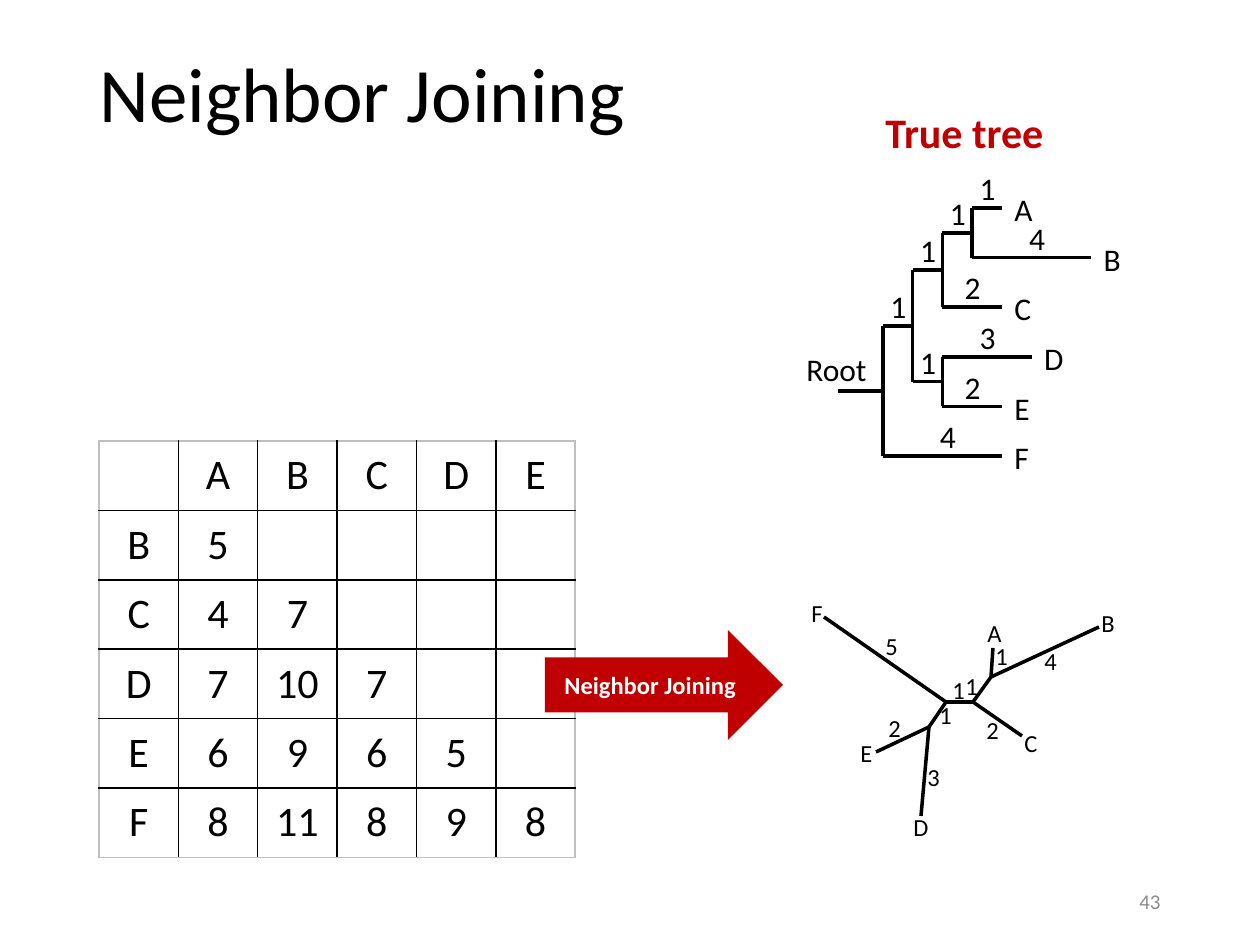
import pptx
import pptx.dml.color
import pptx.enum.shapes
import pptx.enum.text
import pptx.oxml
import pptx.oxml.ns
import pptx.util

RGBColor = pptx.dml.color.RGBColor
ALIGN = pptx.enum.text.PP_ALIGN
ANCHOR = pptx.enum.text.MSO_ANCHOR
BLACK = RGBColor(0x00, 0x00, 0x00)
WHITE = RGBColor(0xFF, 0xFF, 0xFF)
RED = RGBColor(0xC0, 0x00, 0x00)
GRAY = RGBColor(0x8C, 0x8C, 0x8C)
EDGE_GRAY = RGBColor(0xBF, 0xBF, 0xBF)

DISTANCES = [
    ["", "A", "B", "C", "D", "E"],
    ["B", "5", "", "", "", ""],
    ["C", "4", "7", "", "", ""],
    ["D", "7", "10", "7", "", ""],
    ["E", "6", "9", "6", "5", ""],
    ["F", "8", "11", "8", "9", "8"],
]
TABLE_LEFT, TABLE_TOP, COLUMN, ROW = 99, 441, 79, 69

TRUE_TREE = [
    (1, [
        (1, [(1, [(1, "A"), (4, "B")]), (2, "C")]),
        (1, [(3, "D"), (2, "E")]),
    ]),
    (4, "F"),
]
LEAVES = "ABCDEF"
ROOT_X, FIRST_LEAF_Y = 883, 208
UNIT, LEAF_GAP = 29.75, 49.6
LONG_LABEL_SHIFT = {4: 5}

NODES = {
    "left hub": (946, 702), "right hub": (973, 702),
    "AB": (991, 677), "DE": (929, 727),
    "A": (993, 648), "B": (1099, 627), "C": (1022, 736),
    "D": (921, 816), "E": (876, 752), "F": (824, 617),
}
BRANCHES = [
    ("AB", "B", "4", (1032, 640)),
    ("right hub", "C", "2", (974, 709)),
    ("DE", "D", "3", (915, 756)),
    ("DE", "E", "2", (876, 707)),
    ("left hub", "F", "5", (873, 625)),
    ("AB", "A", "1", (983, 635)),
    ("right hub", "AB", "1", (953, 665)),
    ("left hub", "right hub", "1", (940, 669)),
    ("left hub", "DE", "1", (927, 694)),
]
LEAF_LABELS = {
    "A": (975, 612), "B": (1089, 602), "C": (1012, 722),
    "D": (901, 806), "E": (848, 732), "F": (799, 592),
}


def px(value):
    return round(value * 914400 / 126)


def write(frame, text, size, color=BLACK, bold=False, align=ALIGN.LEFT):
    para = frame.paragraphs[0]
    para.alignment = align
    span = para.add_run()
    span.text = text
    values = {"name": "Calibri", "size": pptx.util.Pt(size), "bold": bold}
    for key, value in values.items():
        setattr(span.font, key, value)
    span.font.color.rgb = color
    return para


def add_label(shapes, text, left, top, width, height, size, color=BLACK, bold=False):
    box = shapes.add_textbox(px(left), px(top), px(width), px(height))
    box.text_frame.word_wrap = False
    write(box.text_frame, text, size, color, bold)


def add_line(shapes, start, end):
    line = shapes.add_connector(
        pptx.enum.shapes.MSO_CONNECTOR.STRAIGHT, *map(px, (*start, *end)))
    line.line.color.rgb = BLACK
    line.line.width = pptx.util.Pt(2)
    line._element.spPr.append(pptx.oxml.parse_xml(
        "<a:effectLst %s/>" % pptx.oxml.ns.nsdecls("a")))


def add_clade(shapes, clade, x):
    if isinstance(clade, str):
        y = FIRST_LEAF_Y + LEAVES.index(clade) * LEAF_GAP
        add_label(shapes, clade, x, y - 24, 43, 50, 18)
        return y
    levels = []
    for length, child in clade:
        tip = x + length * UNIT
        y = add_clade(shapes, child, tip)
        add_line(shapes, (x, y), (tip, y))
        middle = (x + tip) / 2 + LONG_LABEL_SHIFT.get(length, 0)
        add_label(shapes, str(length), middle - 20, y - 45, 42, 50, 18)
        levels.append(y)
    add_line(shapes, (x, levels[0]), (x, levels[-1]))
    return (levels[0] + levels[-1]) / 2


def set_borders(cell, colors):
    props = cell._tc.get_or_add_tcPr()
    for position, (tag, color) in enumerate(colors.items()):
        props.insert(position, pptx.oxml.parse_xml(
            '<a:%s %s w="12700"><a:solidFill><a:srgbClr val="%s"/></a:solidFill></a:%s>'
            % (tag, pptx.oxml.ns.nsdecls("a"), color, tag)))


def add_distances(shapes):
    count = len(DISTANCES)
    table = shapes.add_table(
        count, count, px(TABLE_LEFT), px(TABLE_TOP),
        px(COLUMN * count), px(ROW * count)).table
    table.first_row = table.horz_banding = False
    for column in table.columns:
        column.width = px(COLUMN + 0.4)
    for r, values in enumerate(DISTANCES):
        table.rows[r].height = px(ROW + 0.4)
        for c, text in enumerate(values):
            cell = table.cell(r, c)
            cell.fill.background()
            cell.vertical_anchor = ANCHOR.MIDDLE
            outer = {"lnL": c == 0, "lnR": c == count - 1,
                     "lnT": r == 0, "lnB": r == count - 1}
            set_borders(cell, {tag: EDGE_GRAY if edge else BLACK
                               for tag, edge in outer.items()})
            if text:
                write(cell.text_frame, text, 24, align=ALIGN.CENTER)


def add_joined_tree(shapes):
    for start, end, length, (left, top) in BRANCHES:
        add_line(shapes, NODES[start], NODES[end])
        add_label(shapes, length, left, top, 38, 43, 14)
    for name, (left, top) in LEAF_LABELS.items():
        add_label(shapes, name, left, top, 39, 43, 14)


def add_arrow(shapes):
    arrow = shapes.add_shape(
        pptx.enum.shapes.MSO_SHAPE.RIGHT_ARROW, px(545), px(630), px(238), px(110))
    arrow.shadow.inherit = False
    arrow.fill.solid()
    arrow.fill.fore_color.rgb = RED
    arrow.line.fill.background()
    arrow.text_frame.vertical_anchor = ANCHOR.MIDDLE
    write(arrow.text_frame, "Neighbor Joining", 14, WHITE, True, ALIGN.CENTER)


def main():
    deck = pptx.Presentation()
    deck.slide_width, deck.slide_height = px(1260), px(945)
    page = deck.slides.add_slide(deck.slide_layouts[5])
    shapes = page.shapes

    title = shapes.title
    place = {"left": 87, "top": 50, "width": 1086, "height": 183}
    for key, value in place.items():
        setattr(title, key, px(value))
    title.text_frame.vertical_anchor = ANCHOR.TOP
    write(title.text_frame, "Neighbor Joining", 44).line_spacing = 0.9

    number = shapes.add_textbox(px(890), px(876), px(283), px(50))
    number.text_frame.word_wrap = True
    number.text_frame.vertical_anchor = ANCHOR.MIDDLE
    write(number.text_frame, "43", 12, GRAY, align=ALIGN.RIGHT)

    add_joined_tree(shapes.add_group_shape().shapes)
    add_distances(shapes)
    add_arrow(shapes)

    true_tree = shapes.add_group_shape().shapes
    root_y = add_clade(true_tree, TRUE_TREE, ROOT_X)
    add_line(true_tree, (838, root_y), (ROOT_X, root_y))
    add_label(true_tree, "Root", 794, root_y - 47, 86, 50, 18)
    add_label(true_tree, "True tree", 873, 100, 185, 63, 24, RED, True)

    deck.save("out.pptx")


if __name__ == "__main__":
    main()
